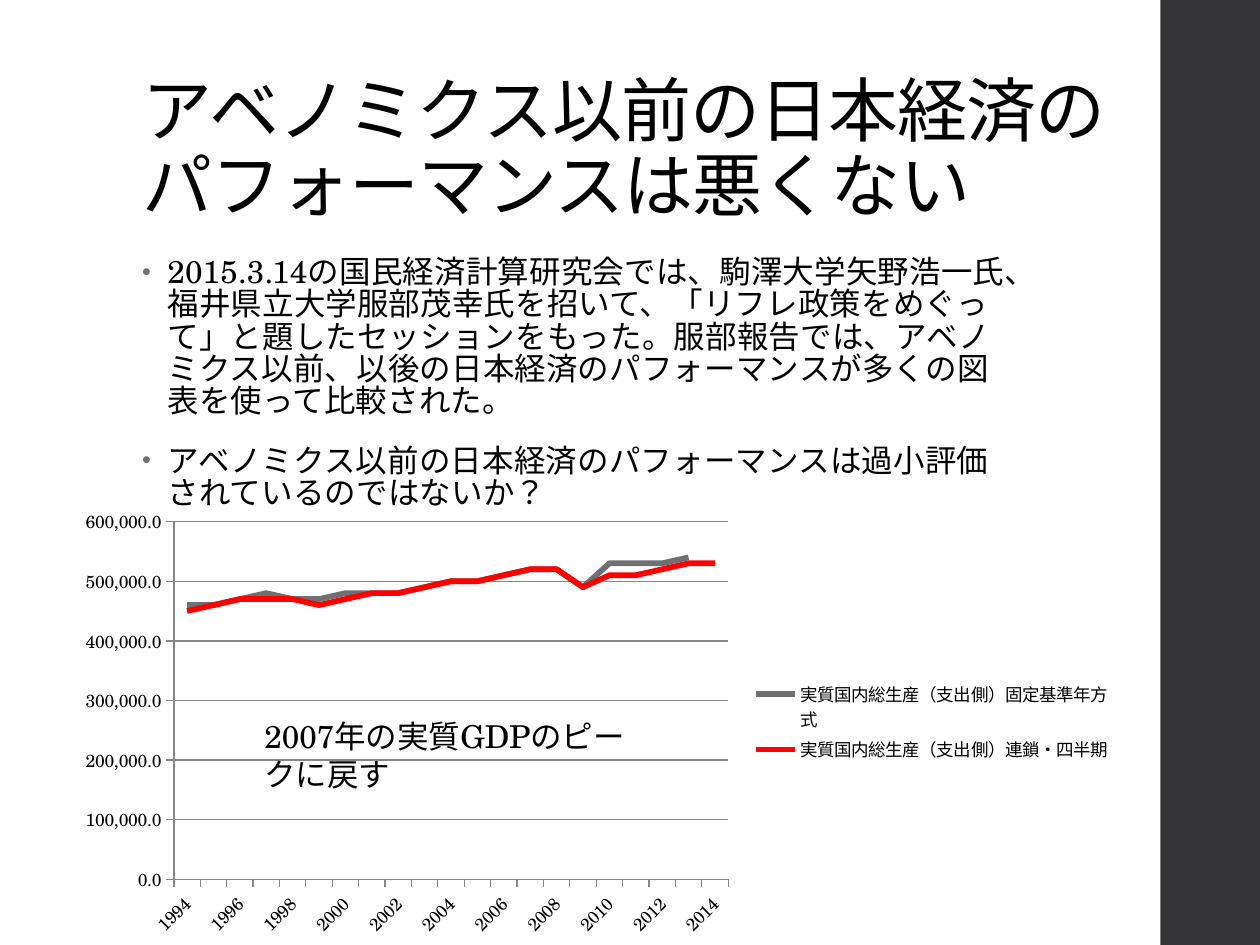
from dataclasses import dataclass

import pptx
import pptx.chart.data
import pptx.dml.color
import pptx.enum.chart
import pptx.enum.lang
import pptx.enum.shapes
import pptx.enum.text
import pptx.oxml
import pptx.oxml.ns
import pptx.util
from pptx.util import Inches

FONT = "TeX Gyre Schola"
BLACK, GREY, RED, DARK, AXIS = "000000", "6F6F74", "FF0000", "353537", "868686"
CHART_AT = (0.51, 3.97, 8.41, 3.53)


@dataclass
class TextBlock:
    at: tuple[float, float, float, float]
    paragraphs: list[str]
    size: float
    line_spacing: float = 1.0
    letter_spacing: float = 0
    bullets: bool = False
    anchor: pptx.enum.text.MSO_ANCHOR = pptx.enum.text.MSO_ANCHOR.TOP


@dataclass
class LineSeries:
    name: str
    ten_thousands: list[int]
    colour: str


TITLE = TextBlock(
    (1.03, 0.4, 7.95, 1.45), ["アベノミクス以前の日本経済のパフォーマンスは悪くない"],
    40, 0.9, -0.5, anchor=pptx.enum.text.MSO_ANCHOR.BOTTOM)
BODY = TextBlock(
    (1.03, 2, 7.05, 2.3),
    ["2015.3.14の国民経済計算研究会では、駒澤大学矢野浩一氏、福井県立大学服部茂幸氏を招いて、"
     "「リフレ政策をめぐって」と題したセッションをもった。服部報告では、アベノミクス以前、以後の"
     "日本経済のパフォーマンスが多くの図表を使って比較された。",
     "アベノミクス以前の日本経済のパフォーマンスは過小評価されているのではないか？"],
    18, 0.85, 0.1, bullets=True)
CHART_NOTE = TextBlock((2, 5.64, 3.15, 0.71), ["2007年の実質GDPのピークに戻す"], 18)

YEARS = [str(year) for year in range(1994, 2015)]
GDP_SERIES = [
    LineSeries("実質国内総生産（支出側）固定基準年方式",
               [46, 46, 47, 48, 47, 47, 48, 48, 48, 49, 50,
                50, 51, 52, 52, 49, 53, 53, 53, 54], GREY),
    LineSeries("実質国内総生産（支出側）連鎖・四半期",
               [45, 46, 47, 47, 47, 46, 47, 48, 48, 49, 50,
                50, 51, 52, 52, 49, 51, 51, 52, 53, 53], RED),
]


def colour(value: str) -> pptx.dml.color.RGBColor:
    return pptx.dml.color.RGBColor.from_string(value)


def add_bullet(para) -> None:
    properties = para._p.get_or_add_pPr()
    properties.set("marL", str(Inches(0.2)))
    properties.set("indent", str(Inches(-0.2)))
    namespace = pptx.oxml.ns.nsdecls("a")
    for xml in (f'<a:buClr {namespace}><a:srgbClr val="{GREY}"/></a:buClr>',
                f'<a:buSzPct {namespace} val="80000"/>',
                f'<a:buFont {namespace} typeface="Arial"/>',
                f'<a:buChar {namespace} char="•"/>'):
        properties.append(pptx.oxml.parse_xml(xml))


def add_text(page, block: TextBlock) -> None:
    box = page.shapes.add_textbox(*map(Inches, block.at))
    frame = box.text_frame
    frame.word_wrap = True
    frame.vertical_anchor = block.anchor
    for index, text in enumerate(block.paragraphs):
        para = frame.add_paragraph() if index else frame.paragraphs[0]
        para.line_spacing = block.line_spacing
        if block.bullets:
            para.space_before = pptx.util.Pt(14)
            para.space_after = pptx.util.Pt(2)
            add_bullet(para)
        span = para.add_run()
        span.text = text
        span.font.name = FONT
        span.font.size = pptx.util.Pt(block.size)
        span.font.color.rgb = colour(BLACK)
        span.font.language_id = pptx.enum.lang.MSO_LANGUAGE_ID.JAPANESE
        if block.letter_spacing:
            span._r.get_or_add_rPr().set("spc", str(round(block.letter_spacing * 100)))


def layout_xml(left: float, top: float, width: float, height: float, inner: bool = False):
    """Manual layout for a chart part, given in inches from the chart's corner."""
    target = '<c:layoutTarget val="inner"/>' if inner else ""
    chart_width, chart_height = CHART_AT[2:]
    return pptx.oxml.parse_xml(
        f'<c:layout {pptx.oxml.ns.nsdecls("c")}><c:manualLayout>{target}'
        f'<c:xMode val="edge"/><c:yMode val="edge"/>'
        f'<c:x val="{left / chart_width}"/><c:y val="{top / chart_height}"/>'
        f'<c:w val="{width / chart_width}"/><c:h val="{height / chart_height}"/>'
        f'</c:manualLayout></c:layout>')


def style_line(line, value: str, width: float) -> None:
    line.color.rgb = colour(value)
    line.width = pptx.util.Pt(width)


def style_axis(axis) -> None:
    axis.major_tick_mark = pptx.enum.chart.XL_TICK_MARK.OUTSIDE
    axis.minor_tick_mark = pptx.enum.chart.XL_TICK_MARK.NONE
    style_line(axis.format.line, AXIS, 0.75)
    axis.tick_labels.font.size = pptx.util.Pt(10)


def add_gdp_chart(page) -> None:
    data = pptx.chart.data.CategoryChartData(number_format="#,##0.0")
    data.categories = YEARS
    for item in GDP_SERIES:
        values = [value * 10000 for value in item.ten_thousands]
        data.add_series(item.name, values + [None] * (len(YEARS) - len(values)))
    chart = page.shapes.add_chart(
        pptx.enum.chart.XL_CHART_TYPE.LINE, *map(Inches, CHART_AT), data).chart
    chart.has_title = False
    chart.font.name = FONT
    chart.font.size = pptx.util.Pt(10)
    chart.font.color.rgb = colour(BLACK)

    # Lines
    plot = chart.plots[0]
    plot.vary_by_categories = False
    for series, item in zip(plot.series, GDP_SERIES):
        series.smooth = False
        series.marker.style = pptx.enum.chart.XL_MARKER_STYLE.NONE
        style_line(series.format.line, item.colour, 3.25)

    # Axes
    style_axis(chart.category_axis)
    style_axis(chart.value_axis)
    label_body = chart.category_axis._element.find(pptx.oxml.ns.qn("c:txPr"))
    label_body.find(pptx.oxml.ns.qn("a:bodyPr")).set("rot", "-2700000")
    value_axis = chart.value_axis
    value_axis.minimum_scale, value_axis.maximum_scale = 0, 600000
    value_axis.major_unit = 100000
    value_axis.has_major_gridlines = True
    style_line(value_axis.major_gridlines.format.line, AXIS, 0.75)
    value_axis.tick_labels.number_format = "#,##0.0"
    value_axis.tick_labels.number_format_is_linked = False

    # Legend and plot area positions
    chart.has_legend = True
    legend = chart.legend
    legend.position = pptx.enum.chart.XL_LEGEND_POSITION.RIGHT
    legend.include_in_layout = False
    legend.font.size = pptx.util.Pt(10)
    plot_area = chart._chartSpace.chart.plotArea
    for parent in (legend._element, plot_area):
        for automatic in parent.findall(pptx.oxml.ns.qn("c:layout")):
            parent.remove(automatic)
    legend._element.insert(1, layout_xml(5.46, 1.4, 2.85, 0.72))
    plot_area.insert(0, layout_xml(0.87, 0.17, 4.4, 2.84, inner=True))


def add_side_band(page) -> None:
    band = page.shapes.add_shape(
        pptx.enum.shapes.MSO_SHAPE.RECTANGLE,
        Inches(9.21), Inches(0), Inches(0.8), Inches(7.5))
    band.shadow.inherit = False
    band.fill.solid()
    band.fill.fore_color.rgb = colour(DARK)
    band.line.fill.background()


def main() -> None:
    deck = pptx.Presentation()
    deck.slide_width, deck.slide_height = Inches(10), Inches(7.5)
    page = deck.slides.add_slide(deck.slide_layouts[6])
    add_side_band(page)
    add_text(page, TITLE)
    add_text(page, BODY)
    add_gdp_chart(page)
    add_text(page, CHART_NOTE)
    deck.save("out.pptx")


if __name__ == "__main__":
    main()
